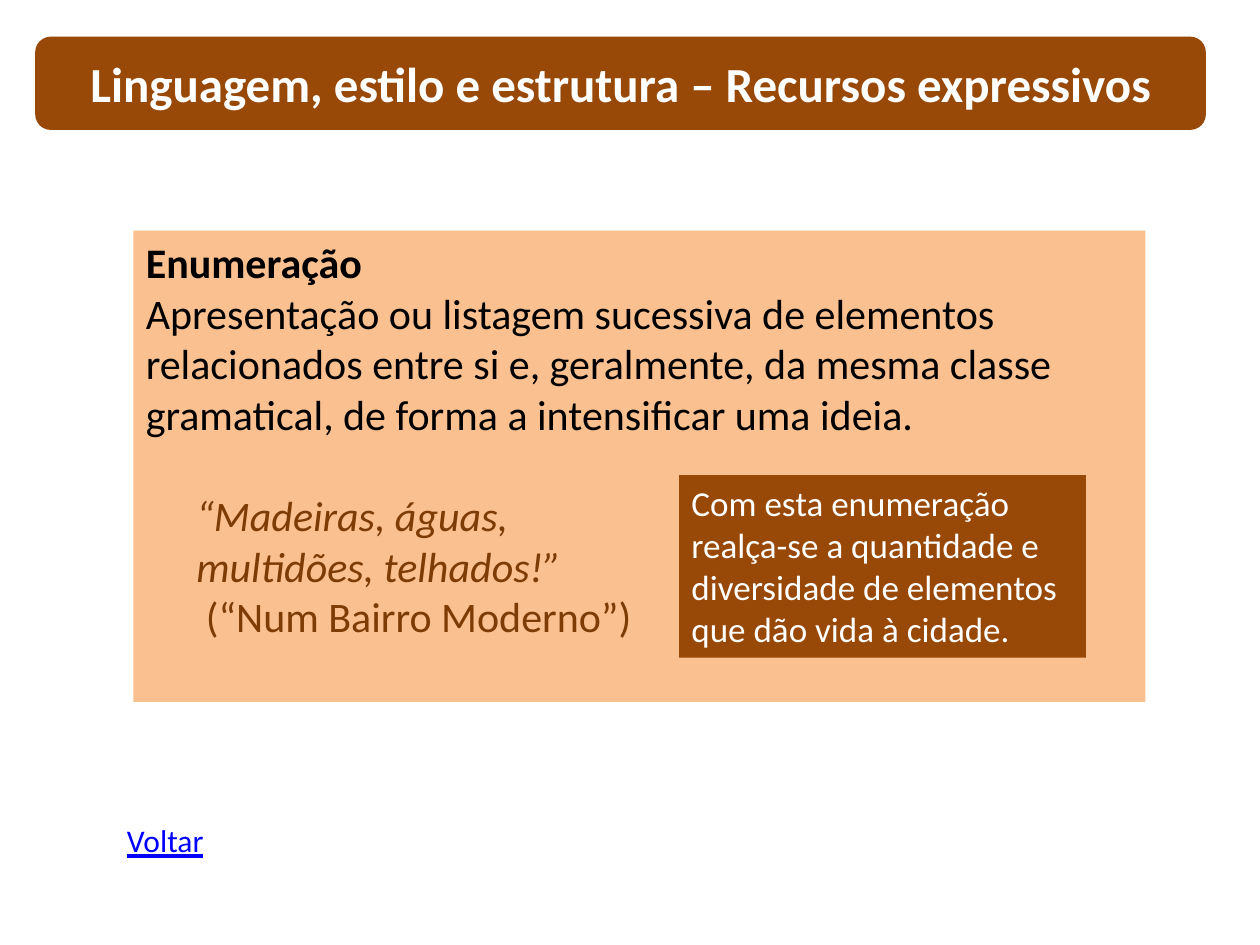
from pptx import Presentation
from pptx.dml.color import RGBColor
from pptx.enum.shapes import MSO_SHAPE
from pptx.enum.text import MSO_ANCHOR, PP_ALIGN
from pptx.util import Cm, Pt

RECT = MSO_SHAPE.RECTANGLE
ROUNDED = MSO_SHAPE.ROUNDED_RECTANGLE
TOP, MIDDLE = MSO_ANCHOR.TOP, MSO_ANCHOR.MIDDLE
LEFT, CENTER = PP_ALIGN.LEFT, PP_ALIGN.CENTER

FONT = "Calibri"
BROWN, DARK_BROWN, PEACH = "984807", "7D3B05", "FAC090"
WHITE, BLACK, BLUE = "FFFFFF", "000000", "0000FF"


def rgb(value):
    return RGBColor.from_string(value)


def add_box(slide, box, fill, kind=RECT, anchor=TOP):
    sp = slide.shapes.add_shape(kind, *(Cm(v) for v in box))
    sp.shadow.inherit = False
    sp.fill.solid()
    sp.fill.fore_color.rgb = rgb(fill)
    sp.line.fill.background()
    tf = sp.text_frame
    tf.word_wrap = True
    tf.vertical_anchor = anchor
    return tf


def add_text(tf, text, size=24, color=BLACK, bold=False, italic=False,
             underline=False, align=LEFT, indent=0, before=0):
    p = tf.add_paragraph() if tf.text else tf.paragraphs[0]
    p.alignment = align
    p.space_before = Pt(before)
    if indent:
        pPr = p._p.get_or_add_pPr()
        pPr.set("marL", str(Cm(indent)))
        pPr.set("indent", "0")
    r = p.add_run()
    r.text = text
    f = r.font
    f.name, f.size, f.color.rgb = FONT, Pt(size), rgb(color)
    f.bold, f.italic, f.underline = bold, italic, underline


def add_title(slide, box):
    tf = add_box(slide, box, BROWN, ROUNDED, MIDDLE)
    add_text(tf, "Linguagem, estilo e estrutura – Recursos expressivos",
             size=28, color=WHITE, bold=True, align=CENTER)


def add_definition(slide, box):
    left, top, width, height = box
    tf = add_box(slide, box, PEACH)
    add_text(tf, "Enumeração", bold=True)
    add_text(tf, "Apresentação ou listagem sucessiva de elementos "
                 "relacionados entre si e, geralmente, da mesma classe "
                 "gramatical, de forma a intensificar uma ideia.")
    quote = dict(color=DARK_BROWN, indent=1.02)
    add_text(tf, "“Madeiras, águas,", italic=True, before=29.3, **quote)
    add_text(tf, "multidões, telhados!”", italic=True, **quote)
    add_text(tf, " (“Num Bairro Moderno”)", **quote)

    note = add_box(slide, (left + 11, top + 4.93, 8.2, 3.68), BROWN)
    add_text(note, "Com esta enumeração realça-se a quantidade e "
                   "diversidade de elementos que dão vida à cidade.",
             size=20, color=WHITE)


def add_back_label(slide, box):
    tf = slide.shapes.add_textbox(*(Cm(v) for v in box)).text_frame
    tf.word_wrap = True
    add_text(tf, "Voltar", size=18, color=BLUE, underline=True)


def main():
    prs = Presentation()
    prs.slide_width, prs.slide_height = Cm(25.4), Cm(19.05)
    slide = prs.slides.add_slide(prs.slide_layouts[6])
    add_title(slide, (0.71, 0.74, 23.6, 1.88))
    add_definition(slide, (2.69, 4.65, 20.4, 9.5))
    add_back_label(slide, (2.31, 16.43, 4.39, 1.02))
    prs.save("out.pptx")


if __name__ == "__main__":
    main()
